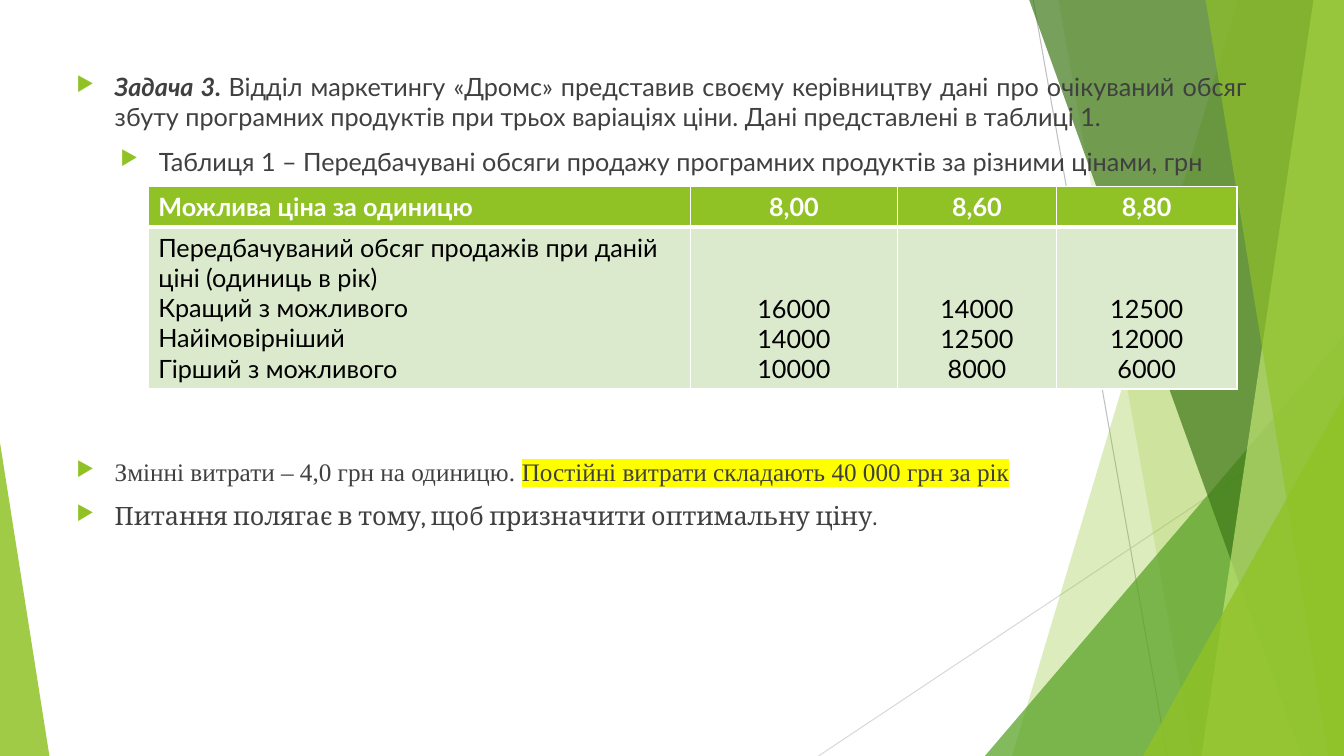
import pptx
import pptx.util
import pptx.dml.color
import pptx.enum.shapes
import pptx.enum.text
import pptx.oxml
import pptx.oxml.ns
from dataclasses import dataclass

SLIDE_W = pptx.util.Inches(13.33)
SLIDE_H = pptx.util.Inches(7.5)
ALIGN = pptx.enum.text.PP_ALIGN
ANCHOR = pptx.enum.text.MSO_ANCHOR
SHAPE = pptx.enum.shapes.MSO_SHAPE


@dataclass(frozen=True)
class Theme:
    lime: str = "90C226"
    pale_lime: str = "C0E474"
    green: str = "54A021"
    dark_green: str = "3F7819"
    row_tint: str = "DBE9CD"
    line_dark: str = "BFBFBF"
    line_light: str = "D9D9D9"
    text: str = "404040"
    black: str = "000000"
    white: str = "FFFFFF"
    marker: str = "FFFF00"
    font: str = "Lato"
    size: int = 18
    gap: int = 10
    table_gap: int = 200


THEME = Theme()


def across(percent):
    return round(SLIDE_W * percent / 100)


def down(percent):
    return round(SLIDE_H * percent / 100)


def rgb(color):
    return pptx.dml.color.RGBColor.from_string(color)


def add_xml(parent, tag, inner="", **attrs):
    """Append one drawing element, with optional inner XML, to parent."""
    pairs = "".join(f' {name}="{value}"' for name, value in attrs.items())
    ns = pptx.oxml.ns.nsdecls("a")
    el = pptx.oxml.parse_xml(f"<a:{tag} {ns}{pairs}>{inner}</a:{tag}>")
    parent.append(el)
    return el


def paint(sp, color, opacity):
    sp.shadow.inherit = False
    sp.line.fill.background()
    sp.fill.solid()
    sp.fill.fore_color.rgb = rgb(color)
    clr = sp._element.spPr.find(".//" + pptx.oxml.ns.qn("a:srgbClr"))
    add_xml(clr, "alpha", val=opacity * 1000)


def add_band(s, top, bottom, color, opacity):
    """Fill from a slanted left edge to the right side of the slide."""
    fb = s.shapes.build_freeform(across(top), 0)
    fb.add_line_segments(
        [(across(100), 0), (across(100), down(100)), (across(bottom), down(100))])
    paint(fb.convert_to_shape(), color, opacity)


def add_corner(s, left, top, width, peak, color, opacity):
    """Right triangle standing on the bottom edge; peak is 0 (left) or 1."""
    sp = s.shapes.add_shape(SHAPE.ISOSCELES_TRIANGLE, across(left), down(top),
                            across(width), down(100 - top))
    sp.adjustments[0] = peak
    paint(sp, color, opacity)


def add_hairline(s, start, end, color):
    line = s.shapes.add_connector(
        pptx.enum.shapes.MSO_CONNECTOR.STRAIGHT,
        across(start[0]), down(start[1]), across(end[0]), down(end[1]))
    line.line.color.rgb = rgb(color)
    line.line.width = pptx.util.Pt(0.75)
    add_xml(line._element.spPr, "effectLst")


def add_text(p, text, font=THEME.font, size=THEME.size, color=THEME.text,
             bold=False, italic=False, highlight=None):
    r = p.add_run()
    r.text = text
    r.font.size = pptx.util.Pt(size)
    r.font.bold = bold
    r.font.italic = italic
    r.font.color.rgb = rgb(color)
    r.font.name = font
    if highlight:
        rpr = r.font._element
        mark = add_xml(rpr, "highlight", f'<a:srgbClr val="{highlight}"/>')
        rpr.find(pptx.oxml.ns.qn("a:solidFill")).addnext(mark)


def add_bullet(p, align, gap):
    p.alignment = align
    p.space_before = pptx.util.Pt(gap)
    ppr = p._p.get_or_add_pPr()
    indent = pptx.util.Inches(0.38)
    ppr.set("marL", str(indent))
    ppr.set("indent", str(-indent))
    add_xml(ppr, "buClr", f'<a:srgbClr val="{THEME.lime}"/>')
    add_xml(ppr, "buSzPct", val=80000)
    add_xml(ppr, "buChar", char="▶")


def add_body(s, left, top, width, height, items):
    tf = s.shapes.add_textbox(across(left), down(top),
                              across(width), down(height)).text_frame
    tf.word_wrap = True
    for i, (align, gap, runs) in enumerate(items):
        p = tf.add_paragraph() if i else tf.paragraphs[0]
        add_bullet(p, align, gap)
        for text, fmt in runs:
            add_text(p, text, **fmt)


def fill_cell(cell, lines, align, fill, edges, **fmt):
    """edges gives the widths of the left, right, top and bottom borders."""
    tcpr = cell._tc.get_or_add_tcPr()
    for side, width in zip("LRTB", edges):
        add_xml(tcpr, "ln" + side,
                f'<a:solidFill><a:srgbClr val="{THEME.white}"/></a:solidFill>',
                w=pptx.util.Pt(width))
    cell.fill.solid()
    cell.fill.fore_color.rgb = rgb(fill)
    tf = cell.text_frame
    for i, line in enumerate(lines):
        p = tf.add_paragraph() if i else tf.paragraphs[0]
        p.alignment = align
        add_text(p, line, **fmt)


def add_price_table(s, left, top, widths, heights, header, columns):
    tbl = s.shapes.add_table(2, len(widths), across(left), down(top),
                             across(sum(widths)), down(sum(heights))).table
    tbl.horz_banding = False
    for row, height in zip(tbl.rows, heights):
        row.height = down(height)
    for c, (width, title, lines) in enumerate(zip(widths, header, columns)):
        tbl.columns[c].width = across(width)
        align = ALIGN.CENTER if c else ALIGN.LEFT
        fill_cell(tbl.cell(0, c), [title], align, THEME.lime, (1, 1, 1, 3),
                  color=THEME.white, bold=True)
        fill_cell(tbl.cell(1, c), lines, align, THEME.row_tint, (1, 1, 3, 1),
                  color=THEME.black)
        tbl.cell(1, c).vertical_anchor = ANCHOR.BOTTOM if c else ANCHOR.TOP


def add_decoration(s):
    add_hairline(s, (76.88, 0), (86.85, 100), THEME.line_dark)
    add_hairline(s, (100, 53.73), (60.9, 100), THEME.line_light)
    add_band(s, 92.1, 75.3, THEME.lime, 30)
    add_band(s, 78.75, 88.73, THEME.lime, 20)
    add_corner(s, 73.28, 44.4, 26.72, 1, THEME.green, 72)
    add_band(s, 76.58, 96.83, THEME.dark_green, 70)
    add_band(s, 97.73, 89.4, THEME.pale_lime, 70)
    add_band(s, 89.7, 98.85, THEME.lime, 65)
    add_corner(s, 85.05, 52.4, 14.95, 1, THEME.lime, 80)
    add_corner(s, 0, 58.53, 3.68, 0, THEME.lime, 85)


def main():
    prs = pptx.Presentation()
    prs.slide_width, prs.slide_height = SLIDE_W, SLIDE_H
    s = prs.slides.add_slide(prs.slide_layouts[6])
    add_decoration(s)
    times = {"font": "Times New Roman"}
    add_body(s, 4.95, 8.8, 88.58, 79.33, [
        (ALIGN.JUSTIFY, 0, [
            ("Задача 3. ", {"bold": True, "italic": True}),
            ("Відділ маркетингу «Дромс» представив своєму керівництву дані про "
             "очікуваний обсяг збуту програмних продуктів при трьох варіаціях "
             "ціни. Дані представлені в таблиці 1.", {})]),
        (ALIGN.CENTER, THEME.gap, [
            ("Таблиця 1 – Передбачувані обсяги продажу програмних продуктів "
             "за різними цінами, грн", {})]),
        (ALIGN.JUSTIFY, THEME.table_gap, [
            ("Змінні витрати – 4,0 грн на одиницю. ", times),
            ("Постійні витрати складають 40 000 грн за рік",
             {**times, "highlight": THEME.marker})]),
        (ALIGN.JUSTIFY, THEME.gap, [
            ("Питання полягає в тому, щоб призначити оптимальну ціну.",
             {"font": "Cambria"})]),
    ])
    add_price_table(
        s, 11.03, 24.67, (40.35, 15.38, 11.85, 13.43), (5.4, 21.4),
        ("Можлива ціна за одиницю", "8,00", "8,60", "8,80"),
        (("Передбачуваний обсяг продажів при даній ціні (одиниць в рік)",
          "Кращий з можливого", "Найімовірніший", "Гірший з можливого"),
         ("16000", "14000", "10000"),
         ("14000", "12500", "8000"),
         ("12500", "12000", "6000")))
    prs.save("out.pptx")


if __name__ == "__main__":
    main()
